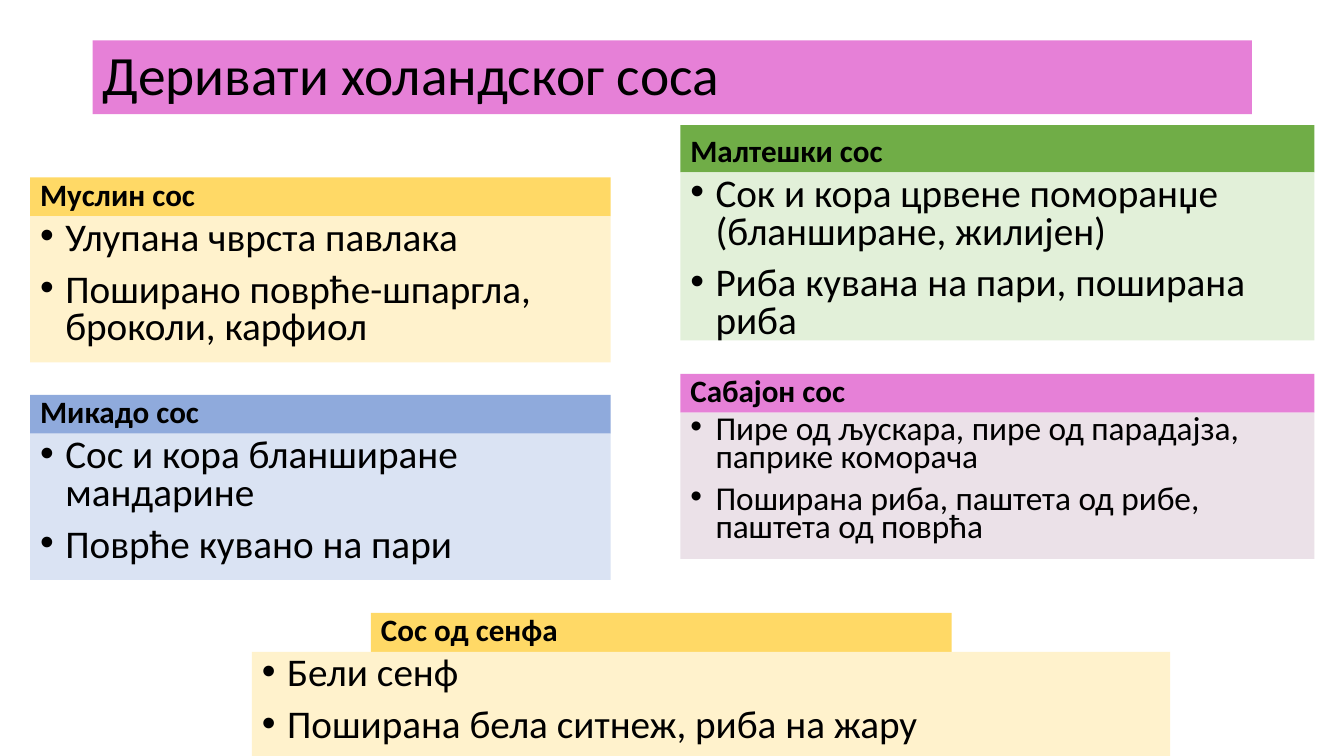
from dataclasses import dataclass

from lxml import etree
from pptx import Presentation
from pptx.dml.color import RGBColor
from pptx.enum.shapes import MSO_SHAPE
from pptx.enum.text import MSO_ANCHOR, MSO_AUTO_SIZE, PP_ALIGN
from pptx.oxml.ns import qn
from pptx.util import Pt

RECTANGLE = MSO_SHAPE.RECTANGLE
TOP, MIDDLE, BOTTOM = MSO_ANCHOR.TOP, MSO_ANCHOR.MIDDLE, MSO_ANCHOR.BOTTOM
NO_AUTOFIT = MSO_AUTO_SIZE.NONE
LEFT = PP_ALIGN.LEFT
TITLE_ONLY = 5


@dataclass(frozen=True)
class Theme:
    font: str = "Calibri"
    text: str = "000000"
    pink: str = "E680D7"
    pale_pink: str = "EBE1E8"
    yellow: str = "FFD966"
    pale_yellow: str = "FFF2CC"
    green: str = "70AD47"
    pale_green: str = "E2F0D9"
    blue: str = "8FAADC"
    pale_blue: str = "DAE3F3"
    title_size: float = 39.6
    heading_size: float = 22.2
    body_size: float = 28
    small_size: float = 23.8
    bullet_indent: int = 18


class SlideBuilder:
    def __init__(self, presentation, theme):
        self.theme = theme
        self.slide = presentation.slides.add_slide(presentation.slide_layouts[TITLE_ONLY])

    def title(self, text, box):
        shape = self.slide.shapes.title
        shape.left, shape.top, shape.width, shape.height = map(Pt, box)
        self.fill(shape, self.theme.pink)
        self.add_text(shape, [text], MIDDLE, {"size": Pt(self.theme.title_size)},
                      {"line_spacing": 0.9})

    def heading(self, text, box, color):
        self.add_text(self.rectangle(box, color), [text], BOTTOM,
                      {"size": Pt(self.theme.heading_size), "bold": True},
                      {"line_spacing": 0.7, "space_before": Pt(10)})

    def bullets(self, lines, box, color, size, spacing):
        shape = self.rectangle(box, color)
        self.add_text(shape, lines, TOP, {"size": Pt(size)},
                      {"line_spacing": spacing, "space_before": Pt(10)})
        indent = Pt(self.theme.bullet_indent)
        for paragraph in shape.text_frame.paragraphs:
            properties = paragraph._p.get_or_add_pPr()
            properties.set("marL", str(indent))
            properties.set("indent", str(-indent))
            etree.SubElement(properties, qn("a:buFont")).set("typeface", "Arial")
            etree.SubElement(properties, qn("a:buChar")).set("char", "•")

    def rectangle(self, box, color):
        shape = self.slide.shapes.add_shape(RECTANGLE, *map(Pt, box))
        shape.shadow.inherit = False
        self.fill(shape, color)
        return shape

    def fill(self, shape, color):
        shape.fill.solid()
        shape.fill.fore_color.rgb = RGBColor.from_string(color)
        shape.line.fill.background()

    def add_text(self, shape, lines, anchor, font_format, paragraph_format):
        frame = shape.text_frame
        frame_format = {"word_wrap": True, "auto_size": NO_AUTOFIT, "vertical_anchor": anchor}
        self.apply(frame, frame_format)
        for index, line in enumerate(lines):
            paragraph = frame.add_paragraph() if index else frame.paragraphs[0]
            self.apply(paragraph, {"alignment": LEFT, **paragraph_format})
            run = paragraph.add_run()
            run.text = line
            self.apply(run.font, {"name": self.theme.font, **font_format})
            run.font.color.rgb = RGBColor.from_string(self.theme.text)

    @staticmethod
    def apply(target, values):
        for name, value in values.items():
            setattr(target, name, value)


def main():
    presentation = Presentation()
    presentation.slide_width, presentation.slide_height = Pt(960), Pt(540)
    theme = Theme()
    builder = SlideBuilder(presentation, theme)
    builder.title("Деривати холандског соса", (66.24, 28.8, 828, 52.8))

    left_column, right_column = (21.6, 414.72), (486, 452.88)
    mustard_heading, mustard_body = (265, 414.72), (180, 655.92)
    regular, small = (theme.body_size, 0.8), (theme.small_size, 0.7)
    # name, heading column, body column, top, heading height, body height,
    # heading colour, body colour, (size, line spacing), lines
    sauces = [
        ("Муслин сос", left_column, left_column, 126.72, 27.8, 104.4,
         theme.yellow, theme.pale_yellow, regular,
         ["Улупана чврста павлака", "Поширано поврће-шпаргла, броколи, карфиол"]),
        ("Малтешки сос", right_column, right_column, 89.4, 33.7, 120,
         theme.green, theme.pale_green, regular,
         ["Сок и кора црвене поморанџе (бланширане, жилијен)",
          "Риба кувана на пари, поширана риба"]),
        ("Микадо сос", left_column, left_column, 282, 27.8, 104.4,
         theme.blue, theme.pale_blue, regular,
         ["Сос и кора бланширане мандарине", "Поврће кувано на пари"]),
        ("Сабајон сос", right_column, right_column, 267, 27.8, 104.4,
         theme.pink, theme.pale_pink, small,
         ["Пире од љускара, пире од парадајза, паприке коморача",
          "Поширана риба, паштета од рибе, паштета од поврћа"]),
        ("Сос од сенфа", mustard_heading, mustard_body, 437.8, 27.8, 74.4,
         theme.yellow, theme.pale_yellow, regular,
         ["Бели сенф", "Поширана бела ситнеж, риба на жару"]),
    ]
    for (name, (heading_left, heading_width), (body_left, body_width), top,
         heading_height, body_height, dark, pale, (size, spacing), lines) in sauces:
        builder.heading(name, (heading_left, top, heading_width, heading_height), dark)
        body_box = (body_left, top + heading_height, body_width, body_height)
        builder.bullets(lines, body_box, pale, size, spacing)

    presentation.save("out.pptx")


if __name__ == "__main__":
    main()
